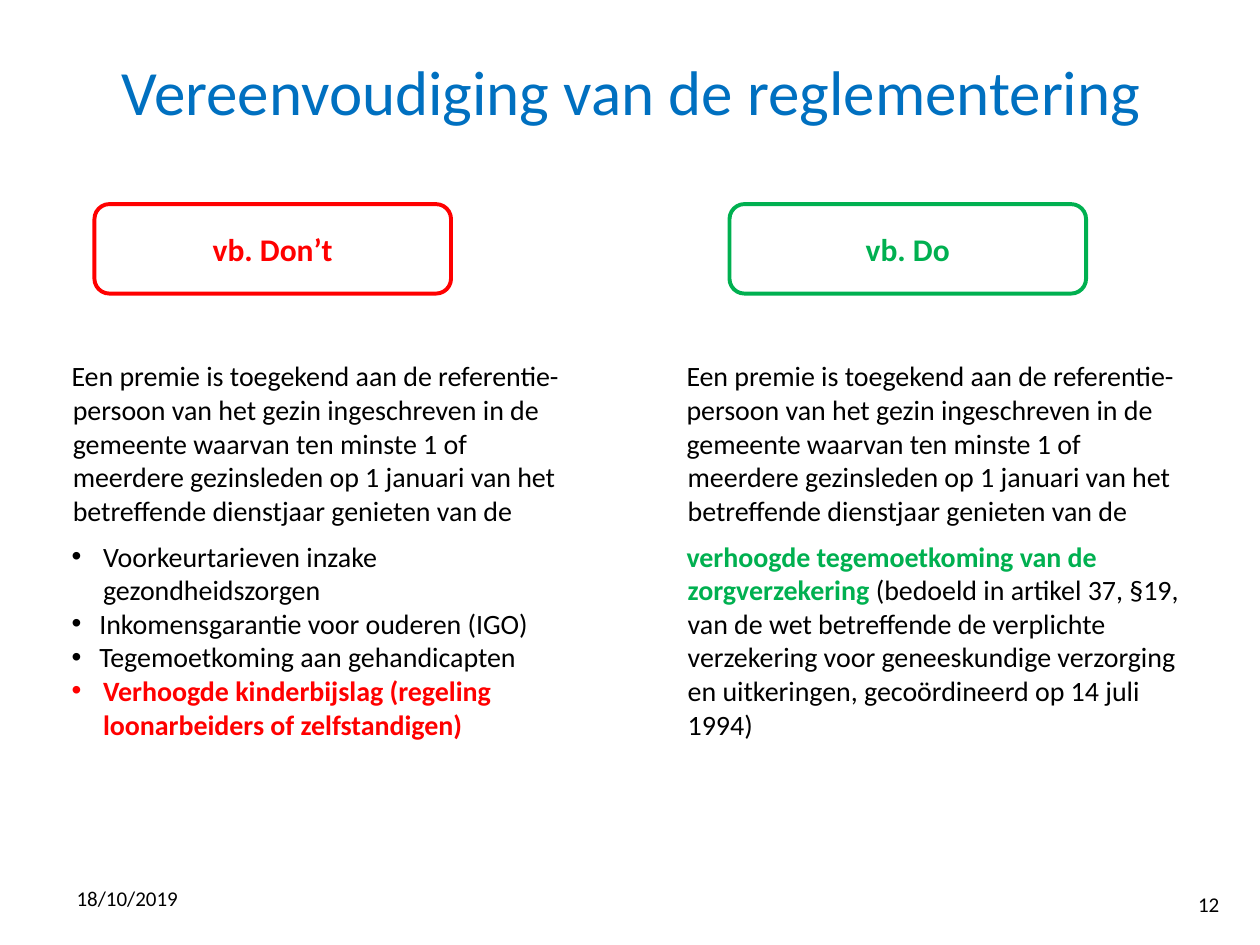
from lxml import etree
from pptx import Presentation
from pptx.dml.color import RGBColor
from pptx.enum.shapes import MSO_SHAPE
from pptx.enum.text import MSO_ANCHOR, PP_ALIGN
from pptx.oxml.ns import qn
from pptx.util import Inches, Pt

ROUNDED = MSO_SHAPE.ROUNDED_RECTANGLE
MIDDLE, TOP = MSO_ANCHOR.MIDDLE, MSO_ANCHOR.TOP
CENTER, LEFT = PP_ALIGN.CENTER, PP_ALIGN.LEFT
BLACK, WHITE, BLUE = "000000", "FFFFFF", "0070C0"
RED, GREEN = "FF0000", "00B050"


def rgb(value):
    """Turn a hex string into a colour."""
    return RGBColor.from_string(value)


def add_text(p, text, size=16, color=BLACK, bold=False):
    """Add formatted text to a paragraph, with a line break at each newline."""
    for i, line in enumerate(text.split("\n")):
        if i:
            p.add_line_break()
        r = p.add_run()
        r.text = line
        r.font.name = "Calibri"
        r.font.size = Pt(size)
        r.font.bold = bold
        r.font.color.rgb = rgb(color)


def set_indent(p, margin, indent, bullet=False):
    """Set the hanging indent of a paragraph and its optional bullet."""
    pPr = p._p.get_or_add_pPr()
    pPr.set("marL", str(Inches(margin)))
    pPr.set("indent", str(Inches(indent)))
    if bullet:
        etree.SubElement(pPr, qn("a:buFont")).set("typeface", "Arial")
        etree.SubElement(pPr, qn("a:buChar")).set("char", "•")


def add_box(s, box):
    """Add an empty wrapping text box and return its text frame."""
    tf = s.shapes.add_textbox(*map(Inches, box)).text_frame
    tf.word_wrap = True
    return tf


def add_label(s, box, text, align=LEFT, anchor=TOP, **fmt):
    """Add a text box with one line."""
    tf = add_box(s, box)
    tf.vertical_anchor = anchor
    p = tf.paragraphs[0]
    p.alignment = align
    add_text(p, text, **fmt)


def add_heading(s, box, text, color):
    """Add an outlined rounded heading."""
    sp = s.shapes.add_shape(ROUNDED, *map(Inches, box))
    sp.shadow.inherit = False
    sp.fill.solid()
    sp.fill.fore_color.rgb = rgb(WHITE)
    sp.line.color.rgb = rgb(color)
    sp.line.width = Pt(2.25)
    tf = sp.text_frame
    tf.vertical_anchor = MIDDLE
    p = tf.paragraphs[0]
    p.alignment = CENTER
    add_text(p, text, size=18, color=color, bold=True)


def add_column(s, box, paragraphs):
    """Add a column of (runs, margin, indent, bullet, space before) paragraphs."""
    tf = add_box(s, box)
    for i, (runs, margin, indent, bullet, before) in enumerate(paragraphs):
        p = tf.add_paragraph() if i else tf.paragraphs[0]
        set_indent(p, margin, indent, bullet)
        if before:
            p.space_before = Pt(before)
        for text, fmt in runs:
            add_text(p, text, **fmt)


def body(*runs, before=0):
    """Describe a plain paragraph."""
    return runs, 0.2, -0.01, False, before


def item(text, margin=0.44, before=0, **fmt):
    """Describe a bulleted paragraph."""
    return [(text, fmt)], margin, 0.19 - margin, True, before


def main():
    """Build the slide."""
    prs = Presentation()
    prs.slide_width, prs.slide_height = Inches(10), Inches(7.5)
    s = prs.slides.add_slide(prs.slide_layouts[6])

    add_label(s, (0.51, 0.21, 9, 1.01), "Vereenvoudiging van de reglementering",
              align=CENTER, anchor=MIDDLE, size=36, color=BLUE)

    add_column(s, (0.28, 2.8, 4.33, 3.16), [
        body(("Een premie is toegekend aan de referentie- persoon van het gezin "
              "ingeschreven in de gemeente waarvan ten minste 1 of meerdere "
              "gezinsleden op 1 januari van het betreffende dienstjaar genieten "
              "van de", {})),
        item("Voorkeurtarieven inzake\ngezondheidszorgen", before=7),
        item("Inkomensgarantie voor ouderen (IGO)", margin=0.41),
        item("Tegemoetkoming aan gehandicapten", margin=0.41),
        item("Verhoogde kinderbijslag (regeling\nloonarbeiders of zelfstandigen)",
             color=RED, bold=True),
    ])
    add_column(s, (5.16, 2.8, 4.45, 3.62), [
        body(("Een premie is toegekend aan de referentie-", {})),
        body(("persoon van het gezin ingeschreven in de", {})),
        body(("gemeente waarvan ten minste 1 of meerdere gezinsleden op 1 januari "
              "van het betreffende dienstjaar genieten van de", {})),
        body(("verhoogde tegemoetkoming van de zorgverzekering ",
              {"color": GREEN, "bold": True}),
             ("(bedoeld in artikel 37, §19, van de wet betreffende de verplichte "
              "verzekering voor geneeskundige verzorging en uitkeringen, "
              "gecoördineerd op 14 juli 1994)", {}), before=7),
    ])

    for left, text, color in ((0.75, "vb. Don’t", RED), (5.79, "vb. Do", GREEN)):
        add_heading(s, (left, 1.62, 2.83, 0.71), text, color)

    add_label(s, (0.51, 6.98, 2.33, 0.4), "18/10/2019", size=12)
    add_label(s, (9.41, 7.03, 0.41, 0.3), "12", size=12)
    prs.save("out.pptx")


if __name__ == "__main__":
    main()
